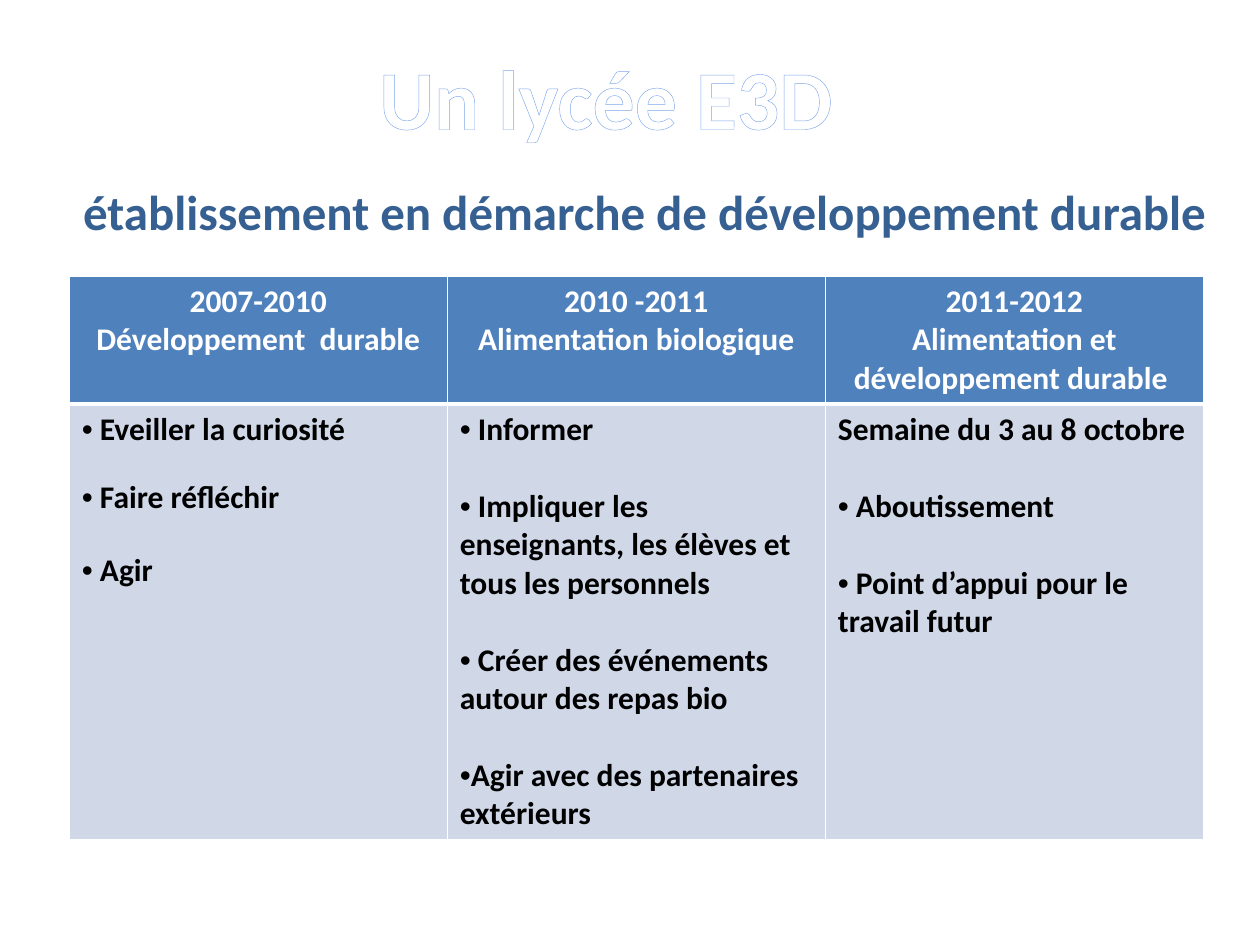
import pptx
import pptx.dml.color
import pptx.enum.text
import pptx.oxml
import pptx.oxml.ns
import pptx.util

SLIDE_W, SLIDE_H = 10, 7.5
FONT = "Calibri"
COLORS = {
    "white": "FFFFFF",
    "black": "000000",
    "header": "4F81BD",
    "body": "D0D8E8",
    "subtitle": "376092",
    "outline": "7EA6EA",
}
LEFT = pptx.enum.text.PP_ALIGN.LEFT
CENTER = pptx.enum.text.PP_ALIGN.CENTER
LINE = 22  # height of one 18 pt line, in points

# Each step: text, bulleted or not, space above in points
PERIODS = [
    (["2007-2010", "Développement  durable"],
     [(" Eveiller la curiosité", True, 0),
      (" Faire réfléchir", True, 17),
      (" Agir", True, 19.5)]),
    (["2010 -2011", "Alimentation biologique"],
     [(" Informer", True, 0),
      (" Impliquer les enseignants, les élèves et tous les personnels", True, LINE),
      (" Créer des événements autour des repas bio", True, LINE),
      ("Agir avec des partenaires extérieurs", True, LINE)]),
    (["2011-2012", "Alimentation et développement durable "],
     [("Semaine du 3 au 8 octobre", False, 0),
      (" Aboutissement", True, LINE),
      (" Point d’appui pour le travail futur", True, LINE)]),
]


def rgb(name):
    return pptx.dml.color.RGBColor.from_string(COLORS[name])


def add_xml(parent, tag, content="", attributes="", index=None):
    """Add a DrawingML element to parent, at the end or at index."""
    namespace = pptx.oxml.ns.nsdecls("a")
    child = pptx.oxml.parse_xml(
        f"<a:{tag} {namespace} {attributes}>{content}</a:{tag}>")
    parent.insert(len(parent) if index is None else index, child)


def solid(name):
    return f'<a:solidFill><a:srgbClr val="{COLORS[name]}"/></a:solidFill>'


def write(frame, text, size=18, color="black", align=LEFT, bullet=False,
          before=0, outline=None, first=True):
    """Write one bold paragraph into a text frame."""
    paragraph = frame.paragraphs[0] if first else frame.add_paragraph()
    paragraph.alignment = align
    paragraph.space_before = pptx.util.Pt(before)
    run = paragraph.add_run()
    run.text = text
    run.font.name = FONT
    run.font.size = pptx.util.Pt(size)
    run.font.bold = True
    run.font.color.rgb = rgb(color)
    if bullet:
        properties = paragraph._p.get_or_add_pPr()
        properties.set("marL", "0")
        properties.set("indent", "0")
        add_xml(properties, "buFont", attributes='typeface="Arial"')
        add_xml(properties, "buChar", attributes='char="•"')
    if outline:
        name, width = outline
        add_xml(run._r.get_or_add_rPr(), "ln", solid(name),
                f'w="{pptx.util.Pt(width)}"', index=0)


def add_heading(slide, text, left, top, width, height, wrap=True, **style):
    """Add a centred heading; its place is in shares of the slide."""
    box = slide.shapes.add_textbox(
        pptx.util.Inches(left * SLIDE_W), pptx.util.Inches(top * SLIDE_H),
        pptx.util.Inches(width * SLIDE_W), pptx.util.Inches(height * SLIDE_H))
    frame = box.text_frame
    frame.word_wrap = wrap
    frame.vertical_anchor = pptx.enum.text.MSO_ANCHOR.MIDDLE
    write(frame, text, align=CENTER, **style)


def style_cell(cell, fill, top=1, bottom=1):
    """Give a cell white borders and a plain fill."""
    properties = cell._tc.get_or_add_tcPr()
    for side, width in zip("LRTB", (1, 1, top, bottom)):
        add_xml(properties, f"ln{side}", solid("white"),
                f'w="{pptx.util.Pt(width)}"')
    cell.fill.solid()
    cell.fill.fore_color.rgb = rgb(fill)


def add_periods(slide, left, top, column_width, row_heights):
    """Add the table with one column for each school period."""
    table = slide.shapes.add_table(
        len(row_heights), len(PERIODS),
        pptx.util.Inches(left), pptx.util.Inches(top),
        pptx.util.Inches(column_width * len(PERIODS)),
        pptx.util.Inches(sum(row_heights))).table
    for row, height in zip(table.rows, row_heights):
        row.height = pptx.util.Inches(height)

    for column, (titles, steps) in enumerate(PERIODS):
        header, body = table.cell(0, column), table.cell(1, column)
        style_cell(header, "header", bottom=3)
        style_cell(body, "body", top=3)
        for i, title in enumerate(titles):
            write(header.text_frame, title, color="white", align=CENTER,
                  first=i == 0)
        for i, (step, bullet, before) in enumerate(steps):
            write(body.text_frame, step, bullet=bullet, before=before,
                  first=i == 0)


def main():
    deck = pptx.Presentation()
    deck.slide_width = pptx.util.Inches(SLIDE_W)
    deck.slide_height = pptx.util.Inches(SLIDE_H)
    slide = deck.slides.add_slide(deck.slide_layouts[6])

    # Actions by period
    add_periods(slide, left=0.55, top=2.19, column_width=3,
                row_heights=(1.01, 3.45))

    # Headings
    add_heading(slide, "établissement en démarche de développement durable",
                0.023, 0.177, 0.977, 0.093, size=28, color="subtitle")
    add_heading(slide, "Un lycée E3D", 0.289, 0.041, 0.384, 0.121,
                wrap=False, size=48, color="white", outline=("outline", 2.48))

    deck.save("out.pptx")


if __name__ == "__main__":
    main()
